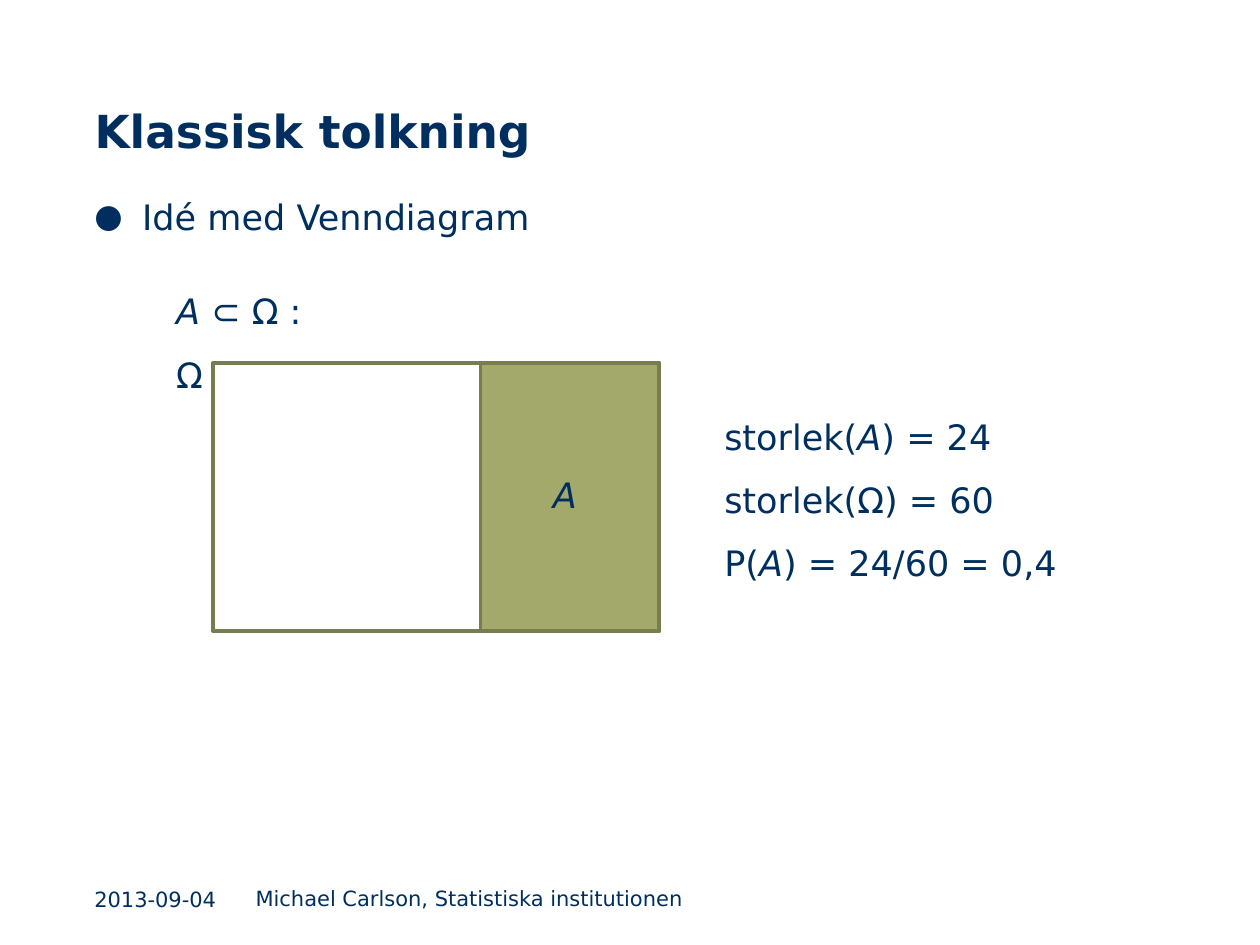
from lxml import etree
from pptx import Presentation
from pptx.dml.color import RGBColor
from pptx.enum.shapes import MSO_SHAPE
from pptx.enum.text import MSO_ANCHOR, MSO_AUTO_SIZE, PP_ALIGN
from pptx.oxml.ns import qn
from pptx.util import Inches, Pt

RECTANGLE = MSO_SHAPE.RECTANGLE
TOP, MIDDLE, BOTTOM = MSO_ANCHOR.TOP, MSO_ANCHOR.MIDDLE, MSO_ANCHOR.BOTTOM
FIT_SHAPE, NO_FIT = MSO_AUTO_SIZE.SHAPE_TO_FIT_TEXT, MSO_AUTO_SIZE.NONE
LEFT = PP_ALIGN.LEFT

COLORS = {"text": "002F5F", "event": "A3A86B", "outline": "797C4F"}
FONT = "DejaVu Sans"
WIDTH, HEIGHT = Inches(10), Inches(7.5)
MARGIN, CONTENT_WIDTH = 6.5, 86.9
FOOTER_TOP, FOOTER_HEIGHT = 93.07, 4.13
LABEL_LEFT, LABEL_HEIGHT = 13, 5.87
OMEGA_SIZE, EVENT_SIZE = 60, 24
VENN_LEFT, VENN_TOP, VENN_WIDTH, VENN_HEIGHT = 16.9, 38.4, 35.4, 28.4


def area(left, top, width, height):
    return (int(WIDTH * left / 100), int(HEIGHT * top / 100),
            int(WIDTH * width / 100), int(HEIGHT * height / 100))


def color(name):
    return RGBColor.from_string(COLORS[name])


def write(box, text, size=20, bold=False, anchor=TOP, wrap=True, spacing=None):
    """Fill a box line by line; text between asterisks is italic."""
    frame = box.text_frame
    frame.word_wrap = wrap
    frame.auto_size = NO_FIT if wrap else FIT_SHAPE
    frame.vertical_anchor = anchor
    for index, line in enumerate(text.split("\n")):
        para = frame.add_paragraph() if index else frame.paragraphs[0]
        para.alignment = LEFT
        if spacing:
            para.line_spacing = spacing
        for position, part in enumerate(line.split("*")):
            if not part:
                continue
            span = para.add_run()
            span.text = part
            span.font.name = FONT
            span.font.size = Pt(size)
            span.font.bold = bold
            span.font.italic = position % 2 == 1
            span.font.color.rgb = color("text")
    return box


def add_title(page, text, place):
    title = page.shapes.title
    title.left, title.top, title.width, title.height = place
    write(title, text, size=26, bold=True, anchor=BOTTOM)


def add_text(page, text, place, **style):
    return write(page.shapes.add_textbox(*place), text, **style)


def add_bullet(page, text, place):
    box = add_text(page, text, place, spacing=Pt(29))
    properties = box.text_frame.paragraphs[0]._p.get_or_add_pPr()
    properties.set("marL", str(Inches(0.38)))
    properties.set("indent", str(-Inches(0.38)))
    etree.SubElement(properties, qn("a:buSzPct")).set("val", "93000")
    etree.SubElement(properties, qn("a:buFont")).set("typeface", FONT)
    etree.SubElement(properties, qn("a:buChar")).set("char", "●")


def add_region(page, place, fill=None):
    region = page.shapes.add_shape(RECTANGLE, *place)
    region.shadow.inherit = False
    if fill:
        region.fill.solid()
        region.fill.fore_color.rgb = color(fill)
    else:
        region.fill.background()
    region.line.color.rgb = color("outline")
    region.line.width = Pt(2)


def add_venn(page):
    event_width = VENN_WIDTH * EVENT_SIZE / OMEGA_SIZE
    event_left = VENN_LEFT + VENN_WIDTH - event_width
    add_region(page, area(VENN_LEFT, VENN_TOP, VENN_WIDTH, VENN_HEIGHT))
    add_region(page, area(event_left, VENN_TOP, event_width, VENN_HEIGHT), "event")
    for text, left, top, width in (
        ("Ω", LABEL_LEFT, 36.8, 4.3),
        ("*A* ⊂ Ω :", LABEL_LEFT, 30, 12.6),
        ("*A*", 42.9, 49.47, 3.9),
    ):
        add_text(page, text, area(left, top, width, LABEL_HEIGHT), wrap=False)


def main():
    deck = Presentation()
    deck.slide_width, deck.slide_height = WIDTH, HEIGHT
    page = deck.slides.add_slide(deck.slide_layouts[5])
    add_title(page, "Klassisk tolkning", area(MARGIN, 5.73, CONTENT_WIDTH, 11.6))
    add_bullet(page, "Idé med Venndiagram", area(MARGIN, 19.07, CONTENT_WIDTH, 62.93))
    add_text(page, "2013-09-04", area(MARGIN, FOOTER_TOP, 12.3, FOOTER_HEIGHT),
             size=12, anchor=MIDDLE)
    add_text(page, "Michael Carlson, Statistiska institutionen",
             area(19.3, FOOTER_TOP, 49.1, FOOTER_HEIGHT), size=12)
    add_venn(page)
    add_text(page, "storlek(*A*) = 24\nstorlek(Ω) = 60\nP(*A*) = 24/60 = 0,4",
             area(56.5, 41.07, 29.7, 21.6), wrap=False, spacing=1.5)
    deck.save("out.pptx")


if __name__ == "__main__":
    main()
